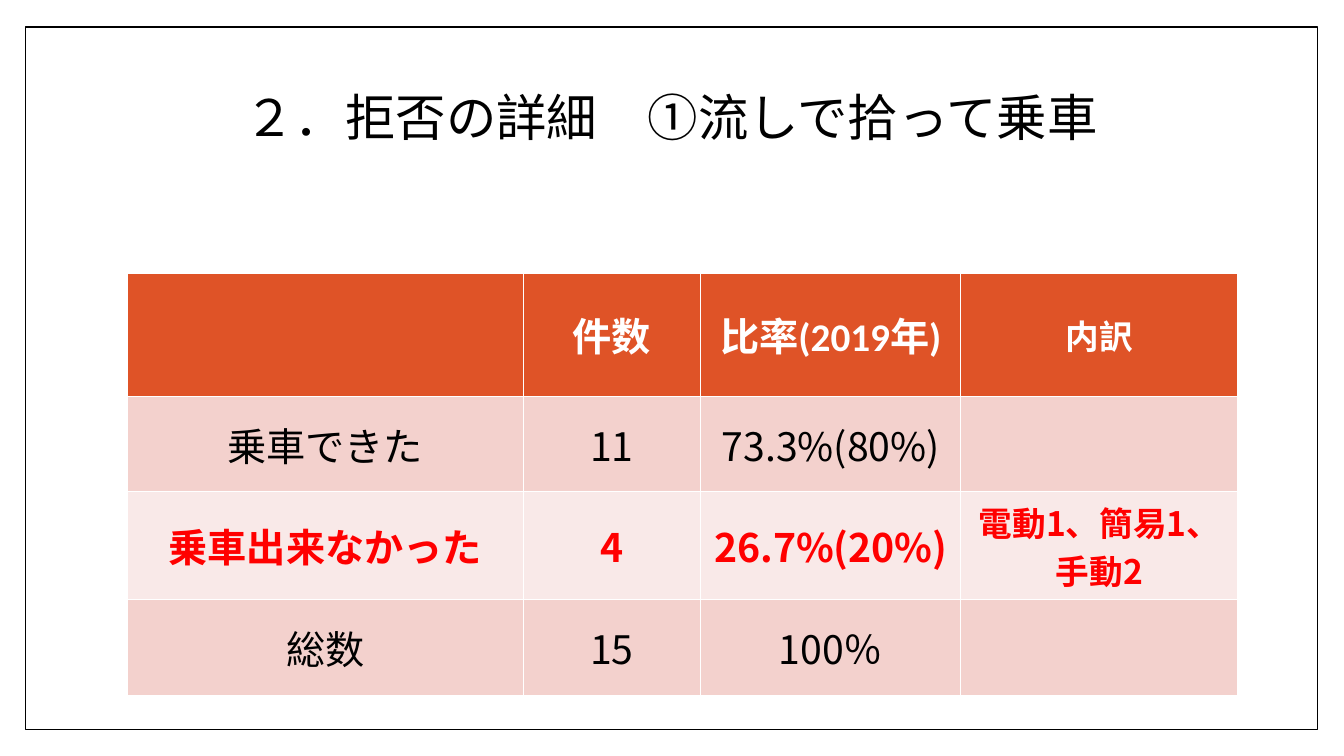
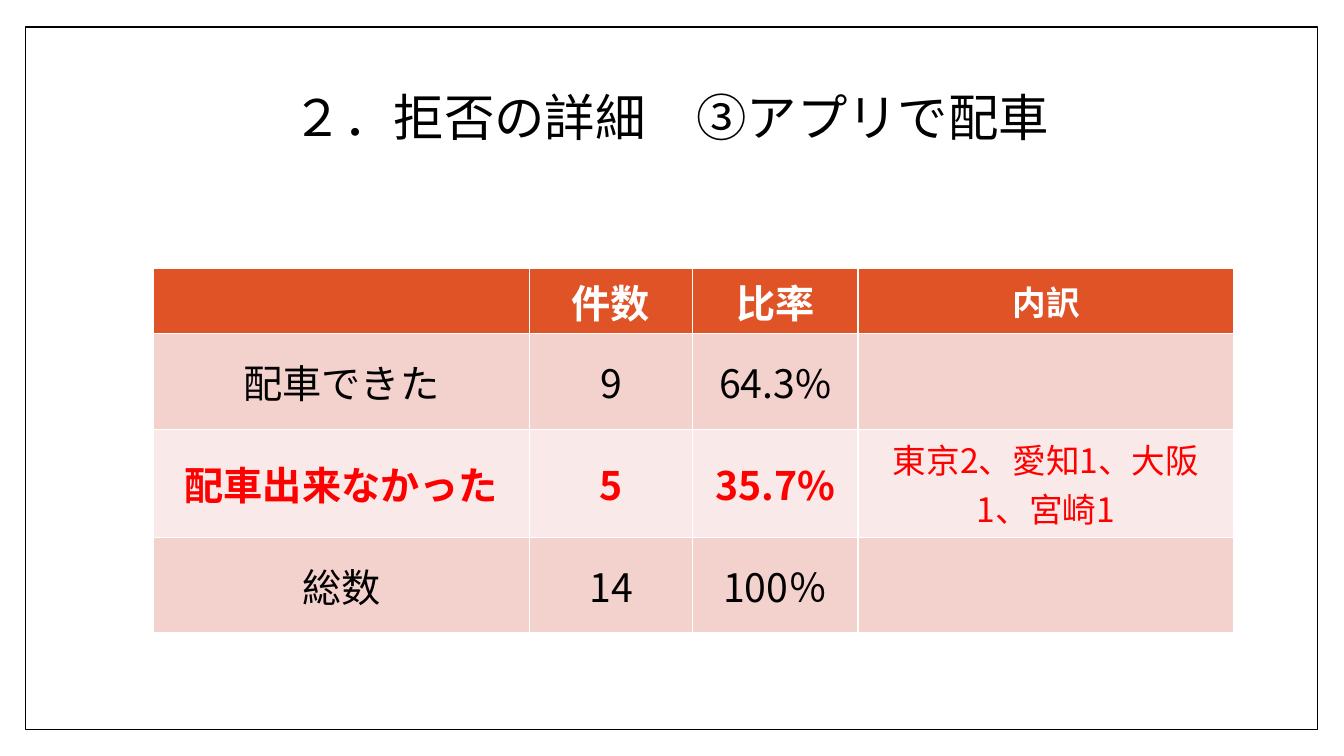
from pptx import Presentation
from pptx.dml.color import RGBColor as RGB
from pptx.enum.shapes import MSO_SHAPE as Shape
from pptx.enum.text import MSO_ANCHOR as Anchor, PP_ALIGN as Align
from pptx.oxml.ns import qn
from pptx.util import Inches, Pt
from lxml.etree import SubElement

# Shared style
WHITE = RGB(0xFF, 0xFF, 0xFF)
BLACK = RGB(0x00, 0x00, 0x00)
RED = RGB(0xFF, 0x00, 0x00)
ORANGE = RGB(0xDF, 0x53, 0x27)
PINK = RGB(0xF3, 0xD1, 0xCD)
PALE = RGB(0xF9, 0xE9, 0xE8)
LATIN = "Calibri"
CJK = "Noto Sans CJK JP"

# Fill, text colour and bold of each table row
ROWS = [(ORANGE, WHITE, True), (PINK, BLACK, False),
        (PALE, RED, True), (PINK, BLACK, False)]


class Deck:
    def __init__(self):
        self.prs = Presentation()
        self.prs.slide_width = Inches(13.33)
        self.prs.slide_height = Inches(7.5)
        self.slide = None

    def page(self, title):
        self.slide = self.prs.slides.add_slide(self.prs.slide_layouts[6])
        self.frame()
        self.title(title)

    def frame(self):
        box = self.slide.shapes.add_shape(
            Shape.RECTANGLE, Inches(0.25), Inches(0.27), Inches(12.82), Inches(6.97))
        box.shadow.inherit = False
        box.fill.solid()
        box.fill.fore_color.rgb = WHITE
        box.line.color.rgb = BLACK
        box.line.width = Pt(1)

    def text(self, para, words, size, color, bold=False, face=CJK):
        para.text = words
        para.alignment = Align.CENTER
        font = para.font
        font.size = Pt(size)
        font.bold = bold
        font.color.rgb = color
        font.name = face
        props = para._p.get_or_add_pPr().find(qn("a:defRPr"))
        SubElement(props, qn("a:ea")).set("typeface", CJK)

    def title(self, words):
        box = self.slide.shapes.add_textbox(
            Inches(1.26), Inches(0.85), Inches(10.79), Inches(0.69))
        body = box.text_frame
        body.word_wrap = True
        body.vertical_anchor = Anchor.MIDDLE
        self.text(body.paragraphs[0], words, 36, BLACK)
        body.paragraphs[0].line_spacing = 0.9

    def table(self, left, top, widths, head, data, plain=False):
        """Draw a result table; plain keeps the breakdown cell from being bold."""
        heights = [head, 0.95, 1.07, 0.95]
        grid = self.slide.shapes.add_table(
            len(data), len(widths), Inches(left), Inches(top),
            Inches(sum(widths)), Inches(sum(heights))).table
        grid.horz_banding = False
        for col, width in zip(grid.columns, widths):
            col.width = Inches(width)
        for row, height in zip(grid.rows, heights):
            row.height = Inches(height)

        last = len(widths) - 1
        for r, (fill, color, bold) in enumerate(ROWS):
            for c, words in enumerate(data[r]):
                cell = grid.cell(r, c)
                cell.fill.solid()
                cell.fill.fore_color.rgb = fill
                cell.vertical_anchor = Anchor.MIDDLE
                if words:
                    size = 24 if c == last else 28
                    face = LATIN if r == 0 or c == 0 else CJK
                    heavy = bold and not (plain and r > 0 and c == last)
                    self.text(cell.text_frame.paragraphs[0], words,
                              size, color, heavy, face)


def main():
    deck = Deck()

    # Hailed on the street
    deck.page("２．拒否の詳細　①流しで拾って乗車")
    deck.table(1.26, 2.71, [3.93, 1.76, 2.58, 2.75], 1.22, [
        ["", "件数", "比率(2019年)", "内訳"],
        ["乗車できた", "11", "73.3%(80%)", ""],
        ["乗車出来なかった", "4", "26.7%(20%)", "電動1、簡易1、手動2"],
        ["総数", "15", "100％", ""],
    ])

    # Booked by app
    deck.page("２．拒否の詳細　③アプリで配車")
    deck.table(1.52, 2.66, [3.73, 1.62, 1.64, 3.73], 0.65, [
        ["", "件数", "比率", "内訳"],
        ["配車できた", "9", "64.3%", ""],
        ["配車出来なかった", "5", "35.7%", "東京2、愛知1、大阪1、宮崎1"],
        ["総数", "14", "100％", ""],
    ], plain=True)

    deck.prs.save("out.pptx")


if __name__ == "__main__":
    main()
